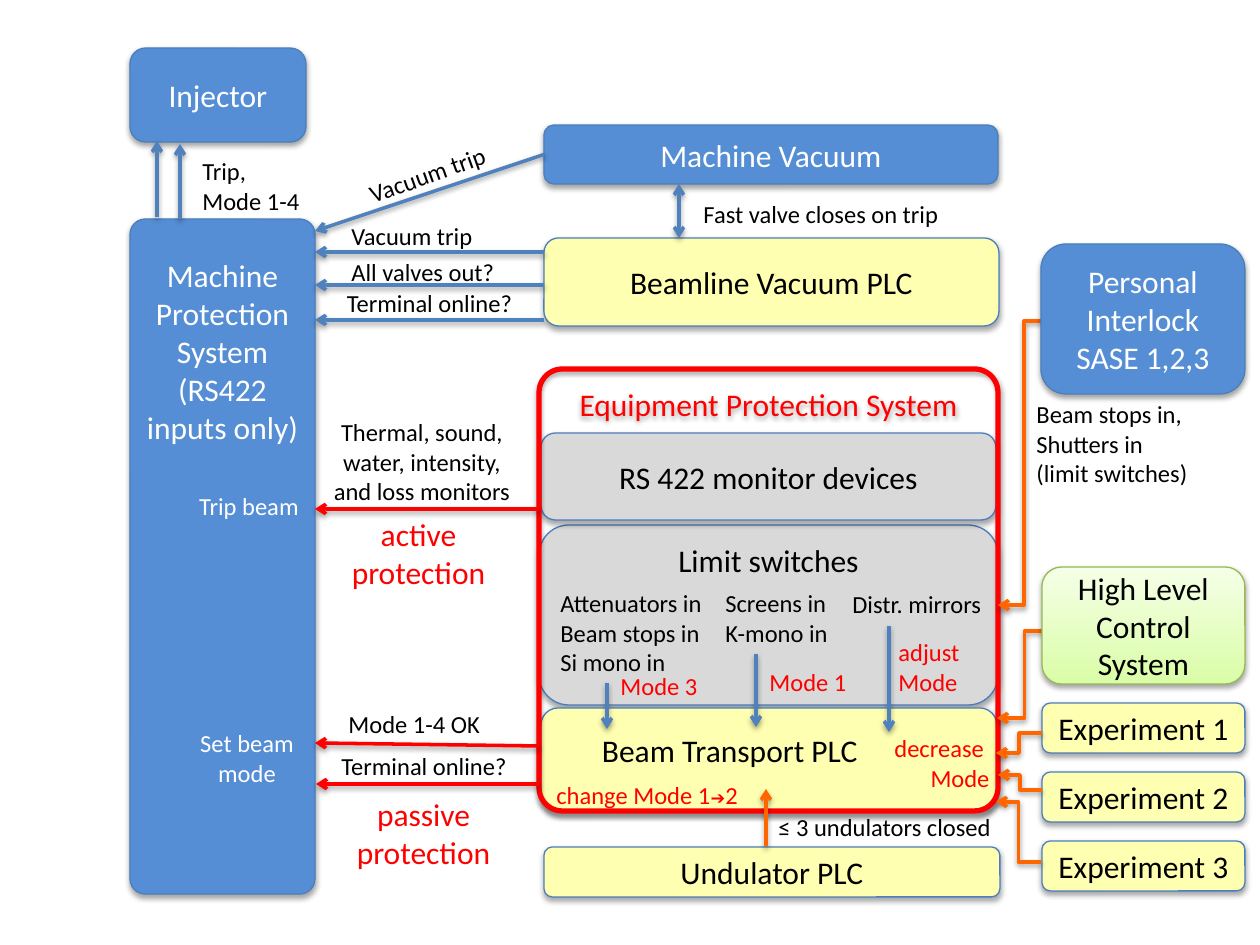
from dataclasses import dataclass
from itertools import groupby
from typing import Optional

from lxml import etree
from pptx import Presentation
from pptx import util as u
from pptx.dml.color import RGBColor
from pptx.enum import shapes, text
from pptx.oxml import ns

EMU_PER_PX = 914400 / 126
LEFT, CENTER, RIGHT = text.PP_ALIGN.LEFT, text.PP_ALIGN.CENTER, text.PP_ALIGN.RIGHT
SYMBOL = "➔"


@dataclass(frozen=True)
class Theme:
    font: str = "Calibri"
    symbol_font: str = "Arial"
    title: int = 18
    label: int = 14
    symbol: int = 10
    white: str = "FFFFFF"
    black: str = "000000"
    red: str = "FF0000"
    blue: str = "558ED5"
    blue_edge: str = "4B7EBC"
    blue_line: str = "4F81BD"
    yellow: str = "FFFFB1"
    grey: str = "D9D9D9"
    orange: str = "FF6600"
    green_edge: str = "98B955"
    green_dark: str = "DAFDA7"
    green_light: str = "F5FFE7"
    edge_width: float = 0.75
    arrow_width: int = 2
    frame_width: int = 3


THEME = Theme()


@dataclass(frozen=True)
class Box:
    caption: str
    left: int
    top: int
    width: int
    height: int
    fill: Optional[str]
    color: str = THEME.black
    edge: str = THEME.blue_edge
    edge_width: float = THEME.edge_width
    fill_end: Optional[str] = None
    corner: Optional[float] = None
    inset_top: Optional[int] = None
    inset_left: Optional[int] = None


@dataclass(frozen=True)
class Label:
    caption: str
    left: int
    top: int
    width: int
    height: int
    color: str = THEME.black
    align: text.PP_ALIGN = LEFT
    size: int = THEME.label
    rotation: float = 0


@dataclass(frozen=True)
class Arrow:
    x1: int
    y1: int
    x2: int
    y2: int
    color: str
    double: bool = False
    bent: bool = False
    start_box: Optional[str] = None
    start_side: int = 1


MACHINE_VACUUM = "Machine Vacuum"

INNER_BOXES = [
    Box("Machine Protection System (RS422 inputs only)", 130, 219, 185, 675,
        THEME.blue, THEME.white, corner=0.082, inset_top=33),
    Box("Injector", 130, 48, 176, 94, THEME.blue, THEME.white),
    Box(MACHINE_VACUUM, 544, 125, 454, 59, THEME.blue, THEME.white),
    Box("Beamline Vacuum PLC", 544, 238, 455, 88, THEME.yellow),
    Box("Limit switches", 539, 525, 459, 180, THEME.grey, inset_top=7),
    Box("RS 422 monitor devices", 541, 433, 455, 87, THEME.grey),
    Box("Beam Transport PLC", 541, 708, 456, 103, THEME.yellow,
        inset_top=18, inset_left=56),
    Box("Undulator PLC", 544, 847, 456, 50, THEME.yellow),
    *(Box(f"Experiment {n + 1}", 1042, 703 + 69 * n, 203, 50, THEME.yellow) for n in range(3)),
    Box("Equipment Protection System", 539, 369, 459, 442, None, THEME.red,
        THEME.red, THEME.frame_width, corner=0.053, inset_top=9),
]

OUTER_BOXES = [
    Box("High Level Control System", 1042, 567, 203, 117, THEME.green_dark,
        edge=THEME.green_edge, fill_end=THEME.green_light),
    Box("Personal Interlock SASE 1,2,3", 1041, 244, 204, 150, THEME.blue, THEME.white),
]

LABELS = [
    Label("Terminal online?", 329, 745, 212, 43),
    Label("Mode 1-4 OK", 336, 703, 180, 43),
    Label("Fast valve closes on trip", 691, 193, 310, 43),
    Label("Vacuum trip", 339, 215, 158, 43),
    Label("Vacuum trip", 354, 151, 159, 43, rotation=340.3),
    Label("All valves out?", 339, 251, 178, 43),
    Label("Terminal online?", 320, 282, 219, 43, align=CENTER),
    Label("Attenuators in\nBeam stops in\nSi mono in", 548, 582, 179, 102),
    Label("Thermal, sound, water, intensity, and loss monitors",
          320, 411, 204, 102, align=CENTER),
    Label("Trip,\nMode 1-4", 190, 150, 139, 72),
    Label("Screens in\nK-mono in", 713, 582, 161, 72),
    Label("Beam stops in, Shutters in\n(limit switches)", 1024, 393, 193, 102),
    Label("Set beam mode", 180, 722, 134, 72, THEME.white, CENTER),
    Label("Trip beam", 181, 485, 136, 43, THEME.white, CENTER),
    Label("Distr. mirrors", 840, 583, 171, 43),
    Label("Mode 3", 608, 665, 105, 44, THEME.red),
    Label("Mode 1", 757, 661, 105, 44, THEME.red),
    Label("adjust\nMode", 886, 631, 105, 72, THEME.red),
    Label("≤ 3 undulators closed", 766, 806, 249, 43),
    Label(f"change Mode 1{SYMBOL}2", 544, 774, 232, 43, THEME.red),
    Label("decrease \nMode", 873, 727, 129, 72, THEME.red, RIGHT),
    Label("active protection", 320, 509, 197, 89, THEME.red, CENTER, THEME.title),
    Label("passive protection", 325, 789, 197, 89, THEME.red, CENTER, THEME.title),
]

ARROWS = [
    Arrow(539, 746, 315, 743, THEME.red),
    Arrow(539, 784, 316, 784, THEME.red),
    Arrow(539, 509, 315, 509, THEME.red),
    Arrow(679, 184, 679, 238, THEME.blue_line, double=True),
    Arrow(544, 154, 315, 231, THEME.blue_line, start_box=MACHINE_VACUUM),
    *(Arrow(544, y, 315, y, THEME.blue_line) for y in (252, 285, 320)),
    Arrow(157, 217, 157, 141, THEME.blue_line),
    Arrow(180, 219, 180, 144, THEME.blue_line),
    Arrow(607, 683, 607, 729, THEME.blue_line),
    Arrow(756, 654, 756, 727, THEME.blue_line),
    Arrow(889, 626, 889, 732, THEME.blue_line),
    Arrow(766, 846, 766, 789, THEME.orange),
    Arrow(1050, 321, 998, 605, THEME.orange, bent=True),
    Arrow(1052, 631, 997, 718, THEME.orange, bent=True),
    Arrow(1042, 733, 996, 753, THEME.orange, bent=True),
    Arrow(1042, 790, 998, 775, THEME.orange, bent=True),
    Arrow(1041, 862, 996, 802, THEME.orange, bent=True),
]


def px(length: int) -> u.Emu:
    return u.Emu(round(length * EMU_PER_PX))


def rgb(color: str) -> RGBColor:
    return RGBColor.from_string(color)


def add_shadow(effects, distance: int, alpha: int) -> None:
    shadow = etree.SubElement(effects, ns.qn("a:outerShdw"), blurRad="40000",
                              dist=str(distance), dir="5400000", rotWithShape="0")
    color = etree.SubElement(shadow, ns.qn("a:srgbClr"), val=THEME.black)
    etree.SubElement(color, ns.qn("a:alpha"), val=str(alpha * 1000))


def write_text(frame, caption: str, size: int, color: str, align: text.PP_ALIGN) -> None:
    frame.word_wrap = True
    for index, line in enumerate(caption.split("\n")):
        para = frame.paragraphs[0] if index == 0 else frame.add_paragraph()
        para.alignment = align
        for is_symbol, letters in groupby(line, lambda letter: letter == SYMBOL):
            span = para.add_run()
            span.text = "".join(letters)
            span.font.name = THEME.symbol_font if is_symbol else THEME.font
            span.font.size = u.Pt(THEME.symbol if is_symbol else size)
            span.font.color.rgb = rgb(color)


def draw_box(page, box: Box):
    shape = page.shapes.add_shape(shapes.MSO_SHAPE.ROUNDED_RECTANGLE, px(box.left),
                                  px(box.top), px(box.width), px(box.height))
    if box.corner is not None:
        shape.adjustments[0] = box.corner
    if box.fill is None:
        shape.fill.background()
    elif box.fill_end is None:
        shape.fill.solid()
        shape.fill.fore_color.rgb = rgb(box.fill)
    else:
        shape.fill.gradient()
        shape.fill.gradient_angle = 90
        for stop, color in zip(shape.fill.gradient_stops, (box.fill, box.fill_end)):
            stop.color.rgb = rgb(color)
    shape.line.color.rgb = rgb(box.edge)
    shape.line.width = u.Pt(box.edge_width)
    shape.shadow.inherit = False
    add_shadow(shape.element.spPr.find(ns.qn("a:effectLst")), 23000, 35)
    frame = shape.text_frame
    frame.vertical_anchor = text.MSO_ANCHOR.MIDDLE
    if box.inset_top is not None:
        frame.vertical_anchor = text.MSO_ANCHOR.TOP
        frame.margin_top = px(box.inset_top)
    if box.inset_left is not None:
        frame.margin_left = px(box.inset_left)
    write_text(frame, box.caption, THEME.title, box.color,
               CENTER if box.inset_left is None else LEFT)
    return shape


def draw_label(page, label: Label) -> None:
    shape = page.shapes.add_textbox(px(label.left), px(label.top),
                                    px(label.width), px(label.height))
    shape.rotation = label.rotation
    write_text(shape.text_frame, label.caption, label.size, label.color, label.align)


def draw_arrow(page, arrow: Arrow, boxes: dict) -> None:
    kind = shapes.MSO_CONNECTOR.ELBOW if arrow.bent else shapes.MSO_CONNECTOR.STRAIGHT
    connector = page.shapes.add_connector(kind, px(arrow.x1), px(arrow.y1),
                                          px(arrow.x2), px(arrow.y2))
    if arrow.start_box:
        connector.begin_connect(boxes[arrow.start_box], arrow.start_side)
    connector.line.color.rgb = rgb(arrow.color)
    connector.line.width = u.Pt(THEME.arrow_width)
    properties = connector.element.spPr
    for end in ("a:headEnd", "a:tailEnd") if arrow.double else ("a:tailEnd",):
        etree.SubElement(properties.find(ns.qn("a:ln")), ns.qn(end), type="arrow")
    add_shadow(etree.SubElement(properties, ns.qn("a:effectLst")), 20000, 38)


def main() -> None:
    deck = Presentation()
    deck.slide_width, deck.slide_height = px(1260), px(945)
    page = deck.slides.add_slide(deck.slide_layouts[6])
    boxes = {box.caption: draw_box(page, box) for box in INNER_BOXES}
    for arrow in ARROWS:
        draw_arrow(page, arrow, boxes)
    for box in OUTER_BOXES:
        draw_box(page, box)
    for label in LABELS:
        draw_label(page, label)
    deck.save("out.pptx")


if __name__ == "__main__":
    main()
